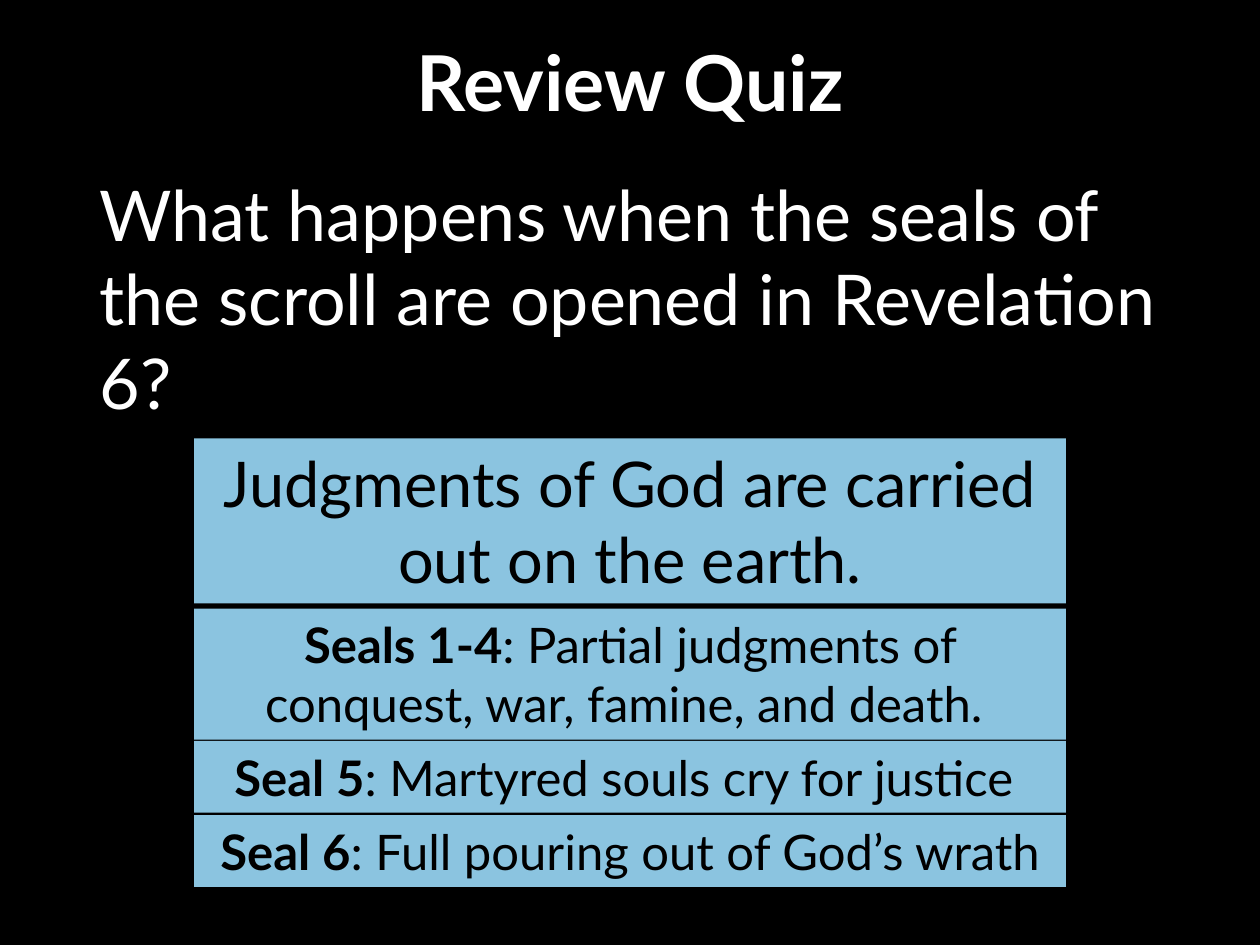
from pptx import Presentation
from pptx.dml.color import RGBColor
from pptx.enum import shapes, text
from pptx.oxml import parse_xml
from pptx.oxml.ns import nsdecls
from pptx.util import Inches, Pt

# Content
TITLE = "Review Quiz"
QUESTION = "What happens when the seals of the scroll are opened in Revelation 6?"
# Each answer: top, height, text size, bold lead, remaining text
ANSWERS = [
    (3.48, 1.31, 36, "", "Judgments of God are carried out on the earth."),
    (4.83, 1.04, 28, "Seals 1-4", ": Partial judgments of conquest, war, famine, and death. "),
    (5.88, 0.57, 28, "Seal 5", ": Martyred souls cry for justice "),
    (6.47, 0.57, 28, "Seal 6", ": Full pouring out of God’s wrath"),
]
FONT, BLACK, WHITE, BLUE = "Lato", "000000", "FFFFFF", "8BC4E0"
LEFT, WIDTH = 0.69, 8.62
BOX_LEFT, BOX_WIDTH = 1.54, 6.92


def paint(fill, color):
    fill.solid()
    fill.fore_color.rgb = RGBColor.from_string(color)


def style(r, size, color, bold=False):
    r.font.name, r.font.size, r.font.bold = FONT, Pt(size), bold
    r.font.color.rgb = RGBColor.from_string(color)


def place(sp, top, height):
    sp.left, sp.top = Inches(LEFT), Inches(top)
    sp.width, sp.height = Inches(WIDTH), Inches(height)


def write(sp, content, size, anchor, align, bold=False):
    tf = sp.text_frame
    tf.text = content
    tf.word_wrap = True
    tf.auto_size = text.MSO_AUTO_SIZE.NONE
    tf.vertical_anchor = anchor
    p = tf.paragraphs[0]
    p.alignment = align
    p.space_before = Pt(0)
    style(p.runs[0], size, WHITE, bold)
    return p


prs = Presentation()
prs.slide_width, prs.slide_height = Inches(10), Inches(7.5)
s = prs.slides.add_slide(prs.slide_layouts[1])
paint(s.background.fill, BLACK)

# Title
title = s.shapes.title
place(title, 0.24, 0.89)
p = write(title, TITLE, 44, text.MSO_ANCHOR.MIDDLE, text.PP_ALIGN.CENTER, True)
p.line_spacing = 0.9

# Question, without bullet or indent
body = s.placeholders[1]
place(body, 1.31, 5.63)
p = write(body, QUESTION, 40, text.MSO_ANCHOR.TOP, text.PP_ALIGN.LEFT)
p.space_after = Pt(6)
pPr = p._p.get_or_add_pPr()
pPr.set("marL", "0")
pPr.set("indent", "0")
pPr.append(parse_xml(f"<a:buNone {nsdecls('a')}/>"))

# Answer boxes
for top, height, size, lead, rest in ANSWERS:
    sp = s.shapes.add_shape(shapes.MSO_SHAPE.RECTANGLE, Inches(BOX_LEFT), Inches(top),
                            Inches(BOX_WIDTH), Inches(height))
    sp.shadow.inherit = False
    paint(sp.fill, BLUE)
    sp.line.fill.background()
    tf = sp.text_frame
    tf.word_wrap = True
    tf.auto_size = text.MSO_AUTO_SIZE.SHAPE_TO_FIT_TEXT
    tf.vertical_anchor = text.MSO_ANCHOR.TOP
    p = tf.paragraphs[0]
    p.alignment = text.PP_ALIGN.CENTER
    for part, bold in ((lead, True), (rest, False)):
        if part:
            r = p.add_run()
            r.text = part
            style(r, size, BLACK, bold)

prs.save("out.pptx")
